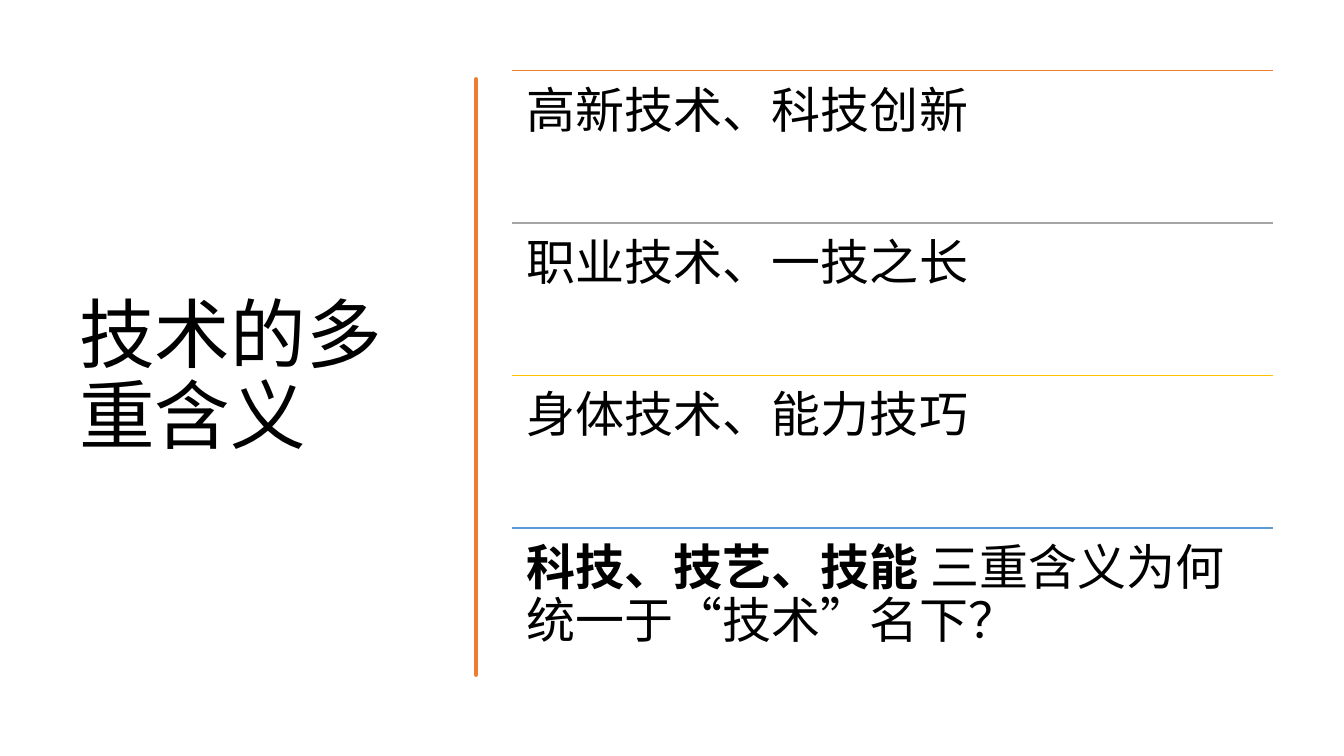
from lxml.etree import SubElement
from pptx import Presentation
from pptx.dml.color import RGBColor
from pptx.enum.shapes import MSO_CONNECTOR
from pptx.enum.text import MSO_ANCHOR, MSO_AUTO_SIZE, PP_ALIGN
from pptx.oxml.ns import qn
from pptx.util import Cm, Pt

COLORS = {
    "text": "000000",
    "orange": "ED7D31",
    "gray": "A5A5A5",
    "gold": "FFC000",
    "blue": "5B9BD5",
}
FONT = "Noto Sans CJK SC"


def write_text(frame, text, size, bold_lead="", anchor=MSO_ANCHOR.TOP, inset_x=0.25, inset_y=0.13):
    """Fill a text frame with one paragraph, optionally opening with bold words."""
    frame.word_wrap = True
    frame.auto_size = MSO_AUTO_SIZE.NONE
    frame.vertical_anchor = anchor
    frame.margin_left = frame.margin_right = Cm(inset_x)
    frame.margin_top = frame.margin_bottom = Cm(inset_y)
    paragraph = frame.paragraphs[0]
    paragraph.alignment = PP_ALIGN.LEFT
    paragraph.line_spacing = 0.9
    for words, bold in ((bold_lead, True), (text, False)):
        if not words:
            continue
        run = paragraph.add_run()
        run.text = words
        run.font.size = Pt(size)
        run.font.bold = bold
        run.font.name = FONT
        run.font.color.rgb = RGBColor.from_string(COLORS["text"])
        properties = run.font._element
        properties.set("lang", "zh-CN")
        SubElement(properties, qn("a:ea")).set("typeface", FONT)


presentation = Presentation()
presentation.slide_width = Cm(33.87)
presentation.slide_height = Cm(19.05)
slide = presentation.slides.add_slide(presentation.slide_layouts[5])

title = slide.shapes.title
title.left, title.top, title.width, title.height = Cm(1.75), Cm(1.78), Cm(9.5), Cm(15.52)
write_text(title.text_frame, "技术的多重含义", 54, anchor=MSO_ANCHOR.MIDDLE)

# Hand-drawn divider: left and right edge at each height, in cm
brush_edges = [
    (2.13, 12.00, 12.07),
    (3.00, 12.02, 12.09),
    (4.30, 11.98, 12.02),
    (5.20, 12.03, 12.06),
    (6.60, 12.04, 12.07),
    (8.20, 12.01, 12.06),
    (9.40, 12.01, 12.07),
    (10.60, 12.06, 12.09),
    (11.60, 12.00, 12.03),
    (12.60, 12.02, 12.06),
    (13.80, 12.02, 12.11),
    (15.00, 12.01, 12.07),
    (16.00, 12.03, 12.07),
    (17.17, 12.01, 12.07),
]
outline = [(left, y) for y, left, right in brush_edges]
outline += [(right, y) for y, left, right in reversed(brush_edges)]
brush = slide.shapes.build_freeform(*outline[0], scale=Cm(1))
brush.add_line_segments(outline[1:], close=True)
divider = brush.convert_to_shape()
divider.shadow.inherit = False
divider.fill.solid()
divider.fill.fore_color.rgb = RGBColor.from_string(COLORS["orange"])
divider.line.color.rgb = RGBColor.from_string(COLORS["orange"])
divider.line.width = Pt(3.25)

meanings = [
    ("orange", "", "高新技术、科技创新"),
    ("gray", "", "职业技术、一技之长"),
    ("gold", "", "身体技术、能力技巧"),
    ("blue", "科技、技艺、技能 ", "三重含义为何统一于“技术”名下？"),
]
list_left, list_top, list_width, row_height = 12.9, 1.78, 19.18, 3.84
for row, (color, bold_lead, meaning) in enumerate(meanings):
    top = Cm(list_top + row * row_height)
    rule = slide.shapes.add_connector(
        MSO_CONNECTOR.STRAIGHT, Cm(list_left), top, Cm(list_left + list_width), top)
    rule.line.color.rgb = RGBColor.from_string(COLORS[color])
    rule.line.width = Pt(1)
    SubElement(rule._element.spPr, qn("a:effectLst"))
    entry = slide.shapes.add_textbox(Cm(list_left), top, Cm(list_width), Cm(row_height))
    write_text(entry.text_frame, meaning, 35, bold_lead=bold_lead, inset_x=0.38, inset_y=0.38)

presentation.save("out.pptx")
